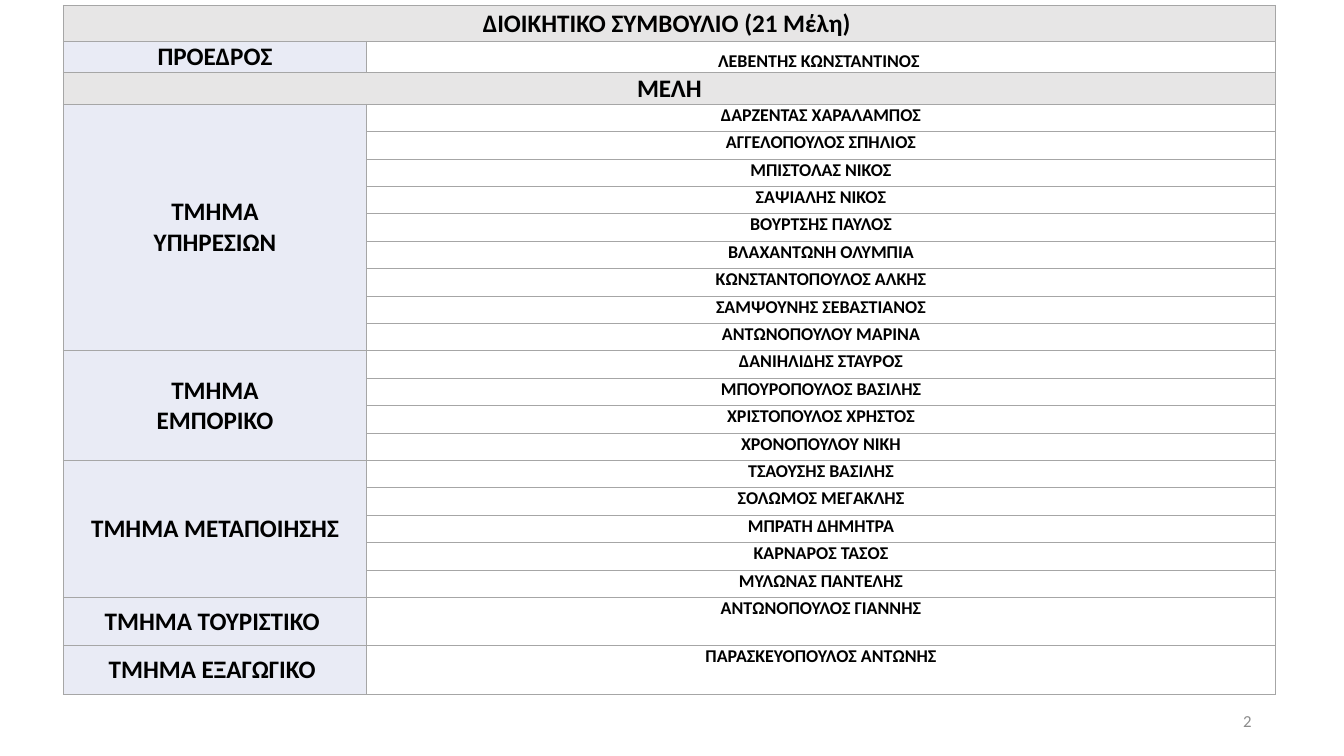
from lxml.etree import SubElement
from pptx import Presentation
from pptx.dml.color import RGBColor
from pptx.enum.text import MSO_ANCHOR as ANCHOR, PP_ALIGN as ALIGN
from pptx.oxml.ns import qn
from pptx.util import Inches, Pt

GREY, BLUE, WHITE, BORDER = "E7E6E6", "E9EBF5", "FFFFFF", "A6A6A6"
TITLE = "ΔΙΟΙΚΗΤΙΚΟ ΣΥΜΒΟΥΛΙΟ (21 Μέλη) "
CHAIR = ("ΠΡΟΕΔΡΟΣ", "ΛΕΒΕΝΤΗΣ ΚΩΝΣΤΑΝΤΙΝΟΣ ")
DEPARTMENTS = [
    ("ΤΜΗΜΑ\nΥΠΗΡΕΣΙΩΝ", [
        "ΔΑΡΖΕΝΤΑΣ ΧΑΡΑΛΑΜΠΟΣ", "ΑΓΓΕΛΟΠΟΥΛΟΣ ΣΠΗΛΙΟΣ", "ΜΠΙΣΤΟΛΑΣ ΝΙΚΟΣ",
        "ΣΑΨΙΑΛΗΣ ΝΙΚΟΣ", "ΒΟΥΡΤΣΗΣ ΠΑΥΛΟΣ", "ΒΛΑΧΑΝΤΩΝΗ ΟΛΥΜΠΙΑ",
        "ΚΩΝΣΤΑΝΤΟΠΟΥΛΟΣ ΑΛΚΗΣ", "ΣΑΜΨΟΥΝΗΣ ΣΕΒΑΣΤΙΑΝΟΣ", "ΑΝΤΩΝΟΠΟΥΛΟΥ ΜΑΡΙΝΑ"]),
    ("ΤΜΗΜΑ\nΕΜΠΟΡΙΚΟ", [
        "ΔΑΝΙΗΛΙΔΗΣ ΣΤΑΥΡΟΣ", "ΜΠΟΥΡΟΠΟΥΛΟΣ ΒΑΣΙΛΗΣ", "ΧΡΙΣΤΟΠΟΥΛΟΣ ΧΡΗΣΤΟΣ",
        "ΧΡΟΝΟΠΟΥΛΟΥ ΝΙΚΗ"]),
    ("ΤΜΗΜΑ ΜΕΤΑΠΟΙΗΣΗΣ", [
        "ΤΣΑΟΥΣΗΣ ΒΑΣΙΛΗΣ", "ΣΟΛΩΜΟΣ ΜΕΓΑΚΛΗΣ", "ΜΠΡΑΤΗ ΔΗΜΗΤΡΑ",
        "ΚΑΡΝΑΡΟΣ ΤΑΣΟΣ", "ΜΥΛΩΝΑΣ ΠΑΝΤΕΛΗΣ"]),
    ("ΤΜΗΜΑ ΤΟΥΡΙΣΤΙΚΟ ", ["ΑΝΤΩΝΟΠΟΥΛΟΣ ΓΙΑΝΝΗΣ"]),
    ("ΤΜΗΜΑ ΕΞΑΓΩΓΙΚΟ ", ["ΠΑΡΑΣΚΕΥΟΠΟΥΛΟΣ ΑΝΤΩΝΗΣ"]),
]
SPACING = {"ΧΡΟΝΟΠΟΥΛΟΥ ΝΙΚΗ": 5.7, "ΜΥΛΩΝΑΣ ΠΑΝΤΕΛΗΣ": 3.6}


def rgb(color):
    return RGBColor.from_string(color)


class Deck:
    """Holds the text style and the current slide, and adds elements to it."""

    def __init__(self, prs, font="Calibri"):
        self.font = font
        self.slide = prs.slides.add_slide(prs.slide_layouts[6])

    def fill_text(self, tf, text, size, color="000000", bold=True, align=ALIGN.CENTER, before=0):
        tf.text = text
        for p in tf.paragraphs:
            p.alignment = align
            p.space_before = Pt(before)
            p.font.name, p.font.size, p.font.bold = self.font, Pt(size), bold
            p.font.color.rgb = rgb(color)

    def text(self, text, left, top, width, height, size, color, align):
        tf = self.slide.shapes.add_textbox(
            Inches(left), Inches(top), Inches(width), Inches(height)).text_frame
        tf.margin_left = tf.margin_right = tf.margin_top = tf.margin_bottom = 0
        tf.word_wrap, tf.vertical_anchor = True, ANCHOR.MIDDLE
        self.fill_text(tf, text, size, color, False, align)

    def table(self, left, top, widths, heights):
        table = self.slide.shapes.add_table(
            len(heights), len(widths), Inches(left), Inches(top),
            Inches(sum(widths)), Inches(sum(heights))).table
        table.first_row = table.horz_banding = False
        for col, width in zip(table.columns, widths):
            col.width = Inches(width)
        for row, height in zip(table.rows, heights):
            row.height = Inches(height)
        for cell in table.iter_cells():
            self.border(cell)
        return table

    def border(self, cell):
        tcPr = cell._tc.get_or_add_tcPr()
        for side in ("a:lnL", "a:lnR", "a:lnT", "a:lnB"):
            ln = SubElement(tcPr, qn(side), w=str(Pt(1)))
            SubElement(SubElement(ln, qn("a:solidFill")), qn("a:srgbClr"), val=BORDER)

    def cell(self, cell, text, fill, size=28, anchor=ANCHOR.MIDDLE, margin=0.01, before=0):
        cell.fill.solid()
        cell.fill.fore_color.rgb = rgb(fill)
        cell.margin_left = cell.margin_right = cell.margin_top = Inches(margin)
        cell.margin_bottom = 0
        cell.vertical_anchor = anchor
        self.fill_text(cell.text_frame, text, size, before=before)


def main():
    prs = Presentation()
    prs.slide_width, prs.slide_height = Inches(20.79), Inches(11.69)
    deck = Deck(prs)
    heights = [0.56, 0.48, 0.48] + [7.63 / 18] * 18 + [0.75] * 2
    table = deck.table(0.98, 0.08, [4.69, 14.06], heights)
    for row, heading in ((0, TITLE), (2, "ΜΕΛΗ")):
        table.cell(row, 0).merge(table.cell(row, 1))
        deck.cell(table.cell(row, 0), heading, GREY)
    deck.cell(table.cell(1, 0), CHAIR[0], BLUE, anchor=ANCHOR.BOTTOM)
    deck.cell(table.cell(1, 1), CHAIR[1], WHITE, 20, ANCHOR.BOTTOM)
    row = 3
    for department, members in DEPARTMENTS:
        if len(members) > 1:
            table.cell(row, 0).merge(table.cell(row + len(members) - 1, 0))
        deck.cell(table.cell(row, 0), department, BLUE)
        for i, member in enumerate(members, row):
            deck.cell(table.cell(i, 1), member, WHITE, 20, ANCHOR.TOP, 0,
                      SPACING.get(member, 4.1))
        row += len(members)
    deck.text("2", 14.68, 10.84, 4.68, 0.62, 18.7, "8C8C8C", ALIGN.RIGHT)
    prs.save("out.pptx")


if __name__ == "__main__":
    main()
